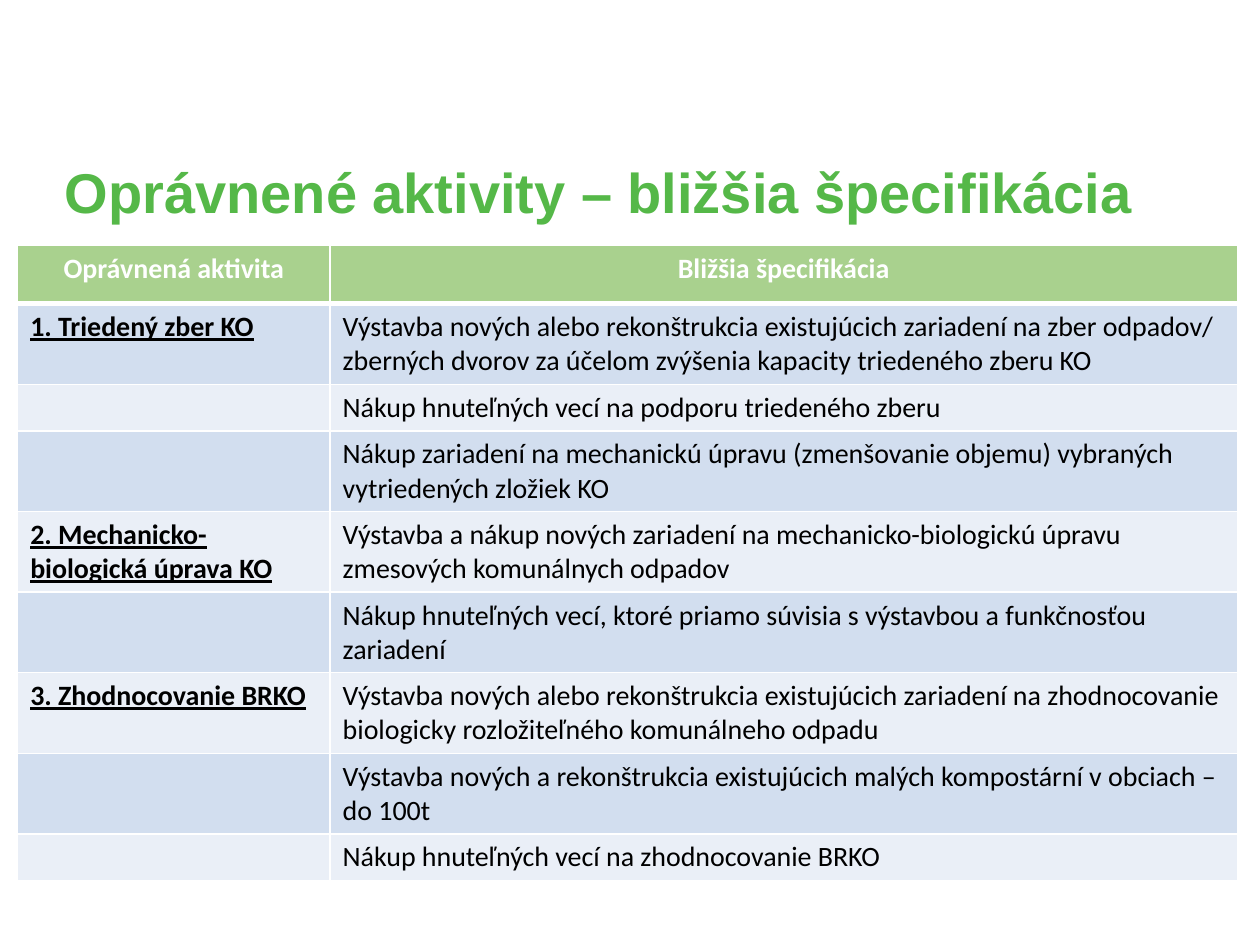
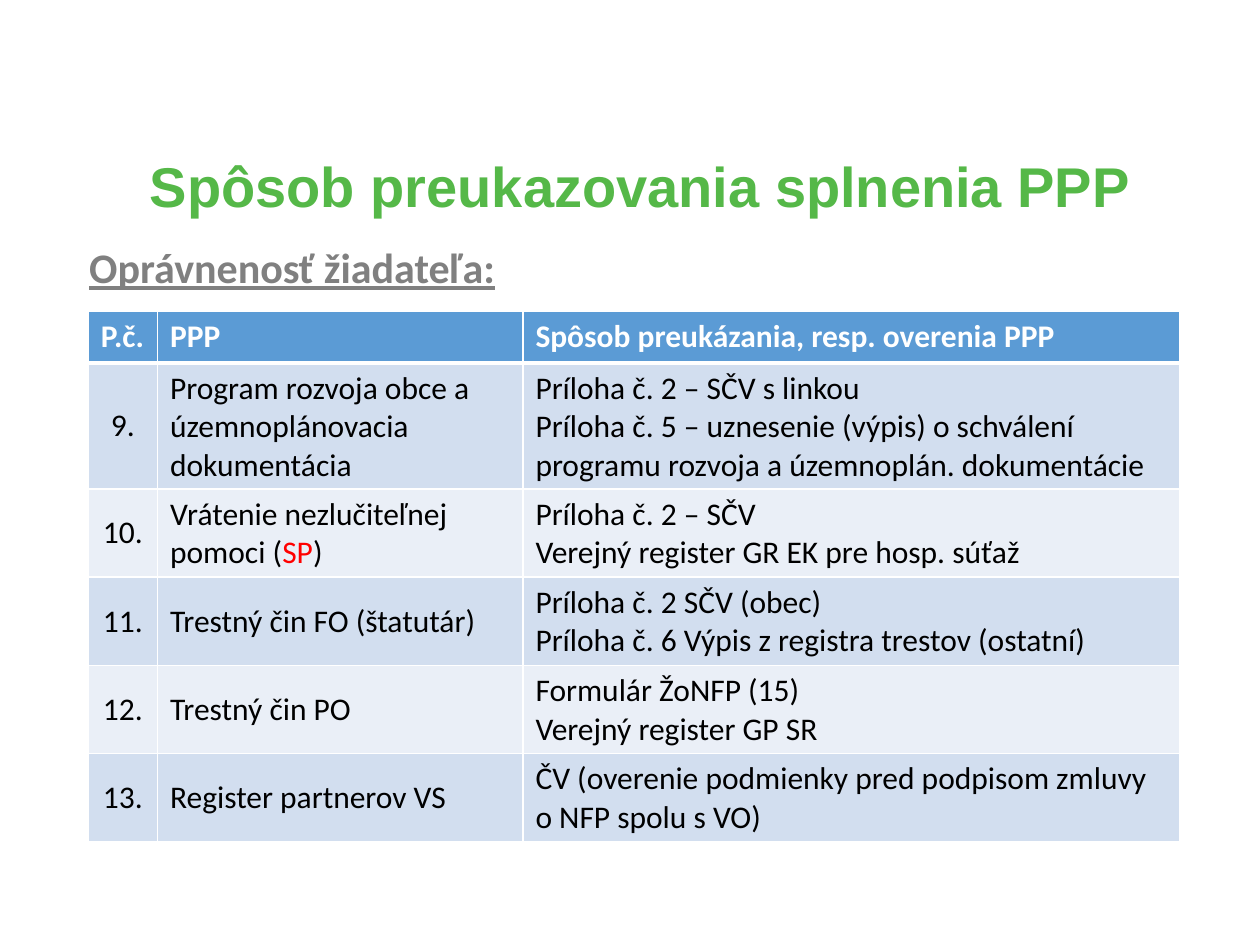
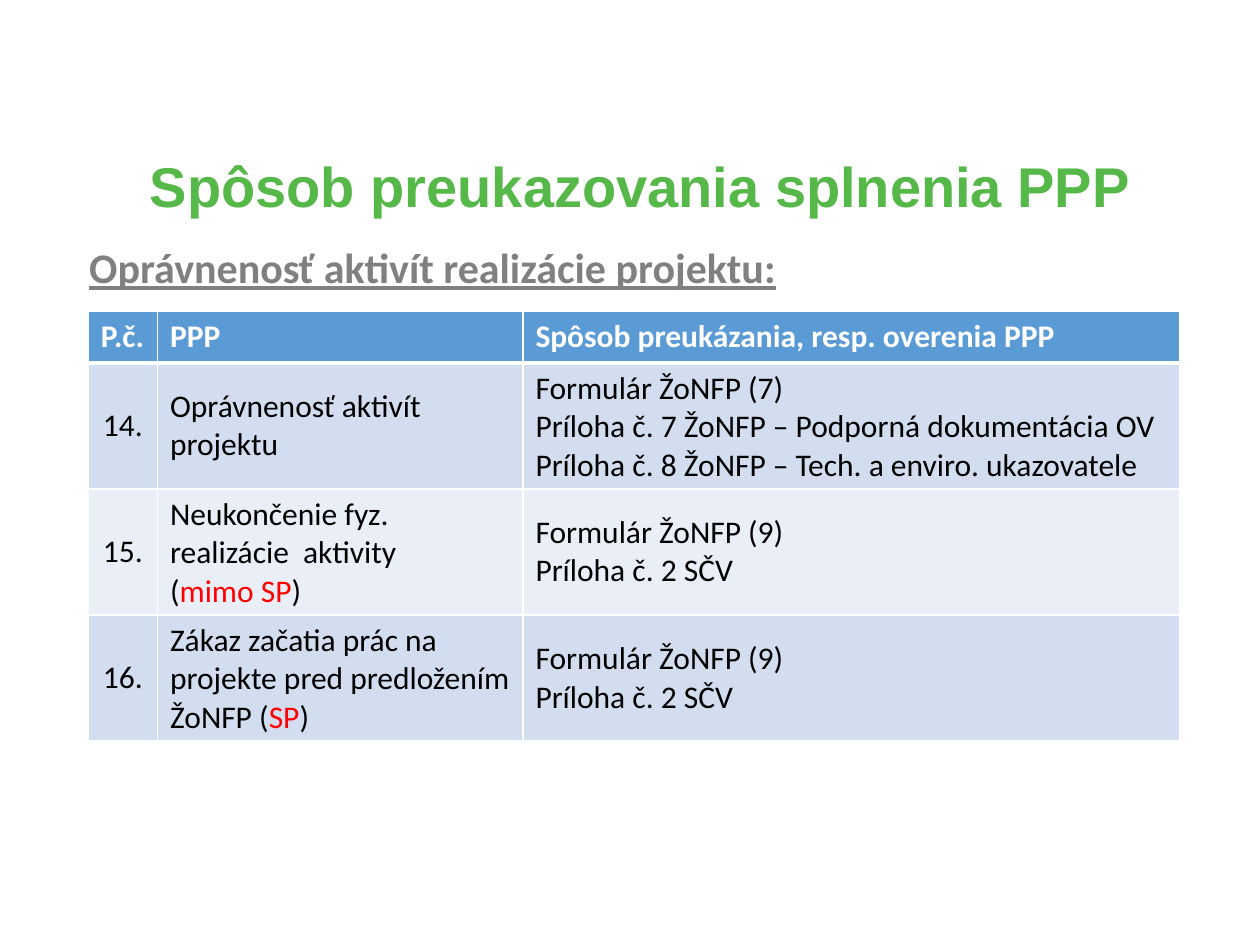
from dataclasses import dataclass

from lxml.etree import SubElement
from pptx import Presentation
from pptx.dml.color import RGBColor
from pptx.enum.text import MSO_ANCHOR as Anchor, PP_ALIGN as Align
from pptx.oxml.ns import qn
from pptx.util import Inches, Pt


@dataclass(frozen=True)
class Theme:
    title_font: str = "Arial"
    body_font: str = "Calibri"
    title_size: int = 32
    heading_size: int = 24
    green: str = "55B848"
    light_green: str = "A9D18E"
    blue: str = "5B9BD5"
    bands: tuple = ("D2DEEF", "EAEFF7")
    gray: str = "808080"
    black: str = "000000"
    white: str = "FFFFFF"
    red: str = "FF0000"
    thin: int = 1
    thick: int = 3


@dataclass(frozen=True)
class TableStyle:
    header_fill: str
    size: int
    anchor: Anchor
    header_align: Align
    first_column_align: Align
    first_column_strong: bool = False


THEME = Theme()
ACTIVITY_STYLE = TableStyle(THEME.light_green, 16, Anchor.TOP, Align.CENTER,
                            Align.LEFT, first_column_strong=True)
CONDITION_STYLE = TableStyle(THEME.blue, 18, Anchor.MIDDLE, Align.LEFT, Align.CENTER)

CONDITION_TITLE = "Spôsob preukazovania splnenia PPP"
CONDITION_HEADER = ("P.č.", "PPP", "Spôsob preukázania, resp. overenia PPP")

ACTIVITIES = [
    ("Oprávnená aktivita", "Bližšia špecifikácia"),
    ("1. Triedený zber KO",
     "Výstavba nových alebo rekonštrukcia existujúcich zariadení na zber odpadov/ "
     "zberných dvorov za účelom zvýšenia kapacity triedeného zberu KO"),
    ("", "Nákup hnuteľných vecí na podporu triedeného zberu"),
    ("", "Nákup zariadení na mechanickú úpravu (zmenšovanie objemu) vybraných "
         "vytriedených zložiek KO"),
    ("2. Mechanicko-biologická úprava KO",
     "Výstavba a nákup nových zariadení na mechanicko-biologickú úpravu "
     "zmesových komunálnych odpadov"),
    ("", "Nákup hnuteľných vecí, ktoré priamo súvisia s výstavbou a funkčnosťou zariadení"),
    ("3. Zhodnocovanie BRKO",
     "Výstavba nových alebo rekonštrukcia existujúcich zariadení na zhodnocovanie "
     "biologicky rozložiteľného komunálneho odpadu"),
    ("", "Výstavba nových a rekonštrukcia existujúcich malých kompostární v obciach – do 100t"),
    ("", "Nákup hnuteľných vecí na zhodnocovanie BRKO"),
]

# Text between asterisks is highlighted.
APPLICANT_CONDITIONS = [
    ("9.", "Program rozvoja obce a územnoplánovacia dokumentácia",
     "Príloha č. 2 – SČV s linkou\n"
     "Príloha č. 5 – uznesenie (výpis) o schválení programu rozvoja a "
     "územnoplán. dokumentácie"),
    ("10.", "Vrátenie nezlučiteľnej pomoci (*SP*)",
     "Príloha č. 2 – SČV\nVerejný register GR EK pre hosp. súťaž"),
    ("11.", "Trestný čin FO (štatutár)",
     "Príloha č. 2 SČV (obec)\nPríloha č. 6 Výpis z registra trestov (ostatní)"),
    ("12.", "Trestný čin PO", "Formulár ŽoNFP (15)\nVerejný register GP SR"),
    ("13.", "Register partnerov VS",
     "ČV (overenie podmienky pred podpisom zmluvy o NFP spolu s VO)"),
]

PROJECT_CONDITIONS = [
    ("14.", "Oprávnenosť aktivít projektu",
     "Formulár ŽoNFP (7)\n"
     "Príloha č. 7 ŽoNFP – Podporná dokumentácia OV\n"
     "Príloha č. 8 ŽoNFP – Tech. a enviro. ukazovatele"),
    ("15.", "Neukončenie fyz. realizácie  aktivity\n(*mimo SP*)",
     "Formulár ŽoNFP (9)\nPríloha č. 2 SČV"),
    ("16.", "Zákaz začatia prác na projekte pred predložením ŽoNFP (*SP*)",
     "Formulár ŽoNFP (9)\nPríloha č. 2 SČV"),
]


class DeckBuilder:
    def __init__(self, theme):
        self.theme = theme
        self.deck = Presentation()
        self.deck.slide_width, self.deck.slide_height = Inches(10), Inches(7.5)
        self.page = None

    def new_page(self):
        self.page = self.deck.slides.add_slide(self.deck.slide_layouts[6])

    def style_span(self, span, font, size, color, bold=False, underline=False):
        span.font.name, span.font.size = font, Pt(size)
        span.font.bold, span.font.underline = bold, underline
        span.font.color.rgb = RGBColor.from_string(color)

    def text_line(self, text, area, align, anchor, **style):
        box = self.page.shapes.add_textbox(*map(Inches, area))
        frame = box.text_frame
        frame.word_wrap, frame.vertical_anchor = True, anchor
        frame.text = text
        para = frame.paragraphs[0]
        para.alignment = align
        self.style_span(para.runs[0], bold=True, **style)
        return para

    def title(self, text, area):
        para = self.text_line(text, area, Align.CENTER, Anchor.MIDDLE,
                              font=self.theme.title_font, size=self.theme.title_size,
                              color=self.theme.green)
        para.line_spacing = 0.9

    def heading(self, text):
        self.text_line(text, (0.61, 1.87, 8.53, 0.5), Align.JUSTIFY, Anchor.TOP,
                       font=self.theme.body_font, size=self.theme.heading_size,
                       color=self.theme.gray, underline=True)

    def table(self, rows, left, top, widths, heights, style):
        area = (left, top, sum(widths), sum(heights))
        grid = self.page.shapes.add_table(len(rows), len(widths), *map(Inches, area)).table
        grid.horz_banding = False
        for column, width in zip(grid.columns, widths):
            column.width = Inches(width)
        for row_index, (row, height) in enumerate(zip(rows, heights)):
            grid.rows[row_index].height = Inches(height)
            for column_index, text in enumerate(row):
                self.fill_cell(grid.cell(row_index, column_index), text,
                               row_index, column_index, style)

    def fill_cell(self, cell, text, row_index, column_index, style):
        header, first = row_index == 0, column_index == 0
        strong = first and not header and style.first_column_strong
        self.border_cell(cell, row_index)
        cell.fill.solid()
        fill = style.header_fill if header else self.theme.bands[(row_index - 1) % 2]
        cell.fill.fore_color.rgb = RGBColor.from_string(fill)
        cell.vertical_anchor = Anchor.TOP if header else style.anchor
        cell.text = text.replace("*", "") if "*" not in text else "\n" * text.count("\n")
        for para, line in zip(cell.text_frame.paragraphs, text.split("\n")):
            if header:
                para.alignment = style.header_align
            else:
                para.alignment = style.first_column_align if first else Align.LEFT
            self.write_line(para, line, style.size, header, strong)

    def write_line(self, para, line, size, header, strong):
        """Write a line, colouring the parts between asterisks red."""
        para.text = ""
        if not line:
            SubElement(para._p, qn("a:endParaRPr"), sz=str(size * 100))
        base = self.theme.white if header else self.theme.black
        for index, part in enumerate(line.split("*")):
            if part:
                span = para.add_run()
                span.text = part
                self.style_span(span, self.theme.body_font, size,
                                self.theme.red if index % 2 else base,
                                bold=header or strong, underline=strong)

    def border_cell(self, cell, row_index):
        """Draw white borders, with a thick rule below the header row."""
        thick_side = {0: "lnB", 1: "lnT"}.get(row_index)
        properties = cell._tc.get_or_add_tcPr()
        for side in ("lnL", "lnR", "lnT", "lnB"):
            width = self.theme.thick if side == thick_side else self.theme.thin
            line = SubElement(properties, qn(f"a:{side}"), w=str(Pt(width)))
            SubElement(SubElement(line, qn("a:solidFill")), qn("a:srgbClr"),
                       val=self.theme.white)

    def activity_page(self):
        self.new_page()
        self.title("Oprávnené aktivity – bližšia špecifikácia", (0.26, 1.12, 8.99, 0.86))
        one_line, two_lines = 0.37, 0.64
        heights = [0.46, two_lines, one_line] + [two_lines] * 5 + [one_line]
        self.table(ACTIVITIES, 0.14, 1.95, (2.48, 7.2), heights, ACTIVITY_STYLE)

    def condition_page(self, heading, conditions, heights):
        self.new_page()
        self.title(CONDITION_TITLE, (0.61, 1.02, 8.95, 0.96))
        self.heading(heading)
        self.table([CONDITION_HEADER] + conditions, 0.7, 2.47, (0.55, 2.9, 5.21),
                   [0.41] + heights, CONDITION_STYLE)


def main():
    builder = DeckBuilder(THEME)
    builder.activity_page()
    builder.condition_page("Oprávnenosť žiadateľa:", APPLICANT_CONDITIONS, [1] + [0.7] * 4)
    builder.condition_page("Oprávnenosť aktivít realizácie projektu:",
                           PROJECT_CONDITIONS, [1] * 3)
    builder.deck.save("out.pptx")


if __name__ == "__main__":
    main()
